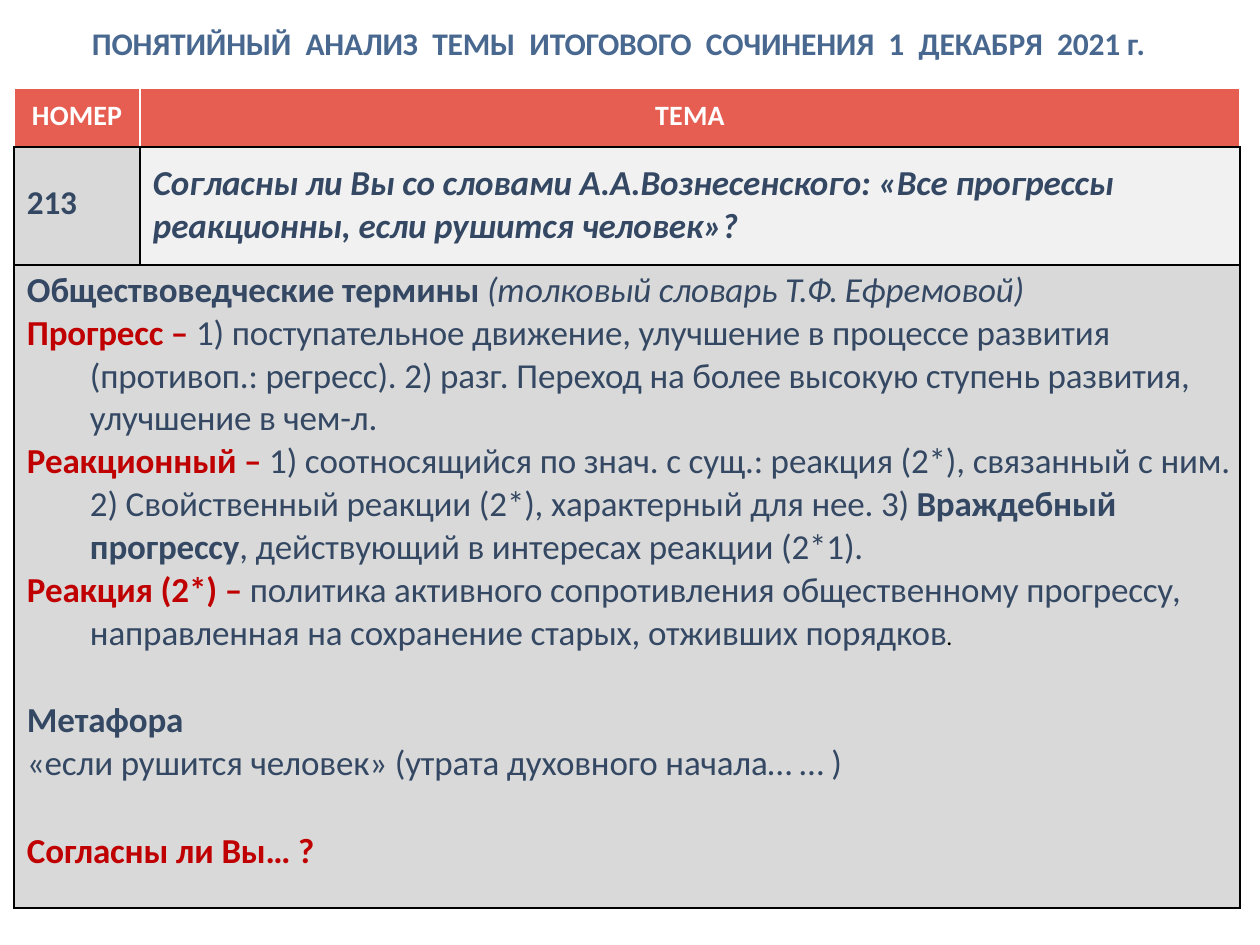
from lxml.etree import SubElement
from pptx import Presentation
from pptx.dml.color import RGBColor
from pptx.enum.text import PP_ALIGN
from pptx.oxml.ns import qn
from pptx.util import Emu, Pt

PX = 914400 // 126
NAVY, RED, BLACK, WHITE = "344863", "C00000", "000000", "FFFFFF"
CORAL, GREY, PALE, TITLE_BLUE = "E65E52", "D9D9D9", "F1F1F1", "496890"
SIDES = ("L", "R", "T", "B")
BLANK_LINE = 25.5  # points left free between groups of the analysis

TERM = {"color": RED, "bold": True}
BOLD = {"bold": True}

# Paragraphs: left indent px, first-line indent px, space before pt, runs
ANALYSIS = [
    (13, 0, 0, [("Обществоведческие термины ", BOLD),
                ("(толковый словарь ", {"italic": True}),
                ("Т.Ф. ", {"italic": True, "spacing": -0.6}),
                ("Ефремовой)", {"italic": True})]),
    (76, -63, 0, [("Прогресс – ", TERM),
                  ("1) поступательное движение, улучшение в процессе развития "
                   "(противоп.: регресс). 2) разг. Переход на более высокую "
                   "ступень развития, улучшение в чем-л.", {})]),
    (76, -63, 0, [("Реакционный – ", TERM),
                  ("1) соотносящийся по знач. с сущ.: реакция (2*), связанный с "
                   "ним. 2) Свойственный реакции (2*), характерный для нее. 3) ", {}),
                  ("Враждебный прогрессу", BOLD),
                  (", действующий в интересах реакции (2*1).", {})]),
    (13, 0, 0, [("Реакция (2*) – ", TERM),
                ("политика активного сопротивления общественному прогрессу,", {})]),
    (76, 0, 0, [("направленная на сохранение старых, отживших порядков", {}),
                (".", {"size": 13.5, "color": BLACK})]),
    (13, 0, BLANK_LINE, [("Метафора", BOLD)]),
    (13, 0, 0, [("«если рушится человек» (утрата духовного начала… … )", {})]),
    (13, 0, BLANK_LINE, [("Согласны ли Вы… ?", TERM)]),
]


def px(length):
    return Emu(length * PX)


def rgb(value):
    return RGBColor.from_string(value)


def add_run(paragraph, text, size=20, color=NAVY, bold=False, italic=False, spacing=-0.1):
    run = paragraph.add_run()
    run.text = text
    font = run.font
    font.name, font.size, font.bold, font.italic = "Calibri", Pt(size), bold, italic
    font.color.rgb = rgb(color)
    run._r.get_or_add_rPr().set("spc", str(round(spacing * 100)))


def write_paragraphs(frame, paragraphs, align=PP_ALIGN.LEFT):
    frame.word_wrap = True
    for number, (left, first, before, runs) in enumerate(paragraphs):
        paragraph = frame.add_paragraph() if number else frame.paragraphs[0]
        paragraph.alignment = align
        paragraph.space_before = Pt(before)
        properties = paragraph._p.get_or_add_pPr()
        properties.set("marL", str(px(left)))
        properties.set("indent", str(px(first)))
        for text, style in runs:
            add_run(paragraph, text, **style)


def style_cell(cell, fill, top, borders):
    cell.margin_left = cell.margin_right = cell.margin_bottom = 0
    cell.margin_top = px(top)
    properties = cell._tc.get_or_add_tcPr()
    for side, color in zip(SIDES, borders):
        line = SubElement(properties, qn(f"a:ln{side}"), w=str(Pt(1)))
        SubElement(SubElement(line, qn("a:solidFill")), qn("a:srgbClr"), val=color)
    cell.fill.solid()
    cell.fill.fore_color.rgb = rgb(fill)


def add_title(slide):
    title = slide.shapes.add_textbox(px(91), px(23), px(1067), px(42))
    frame = title.text_frame
    frame.margin_left = frame.margin_right = frame.margin_bottom = 0
    frame.margin_top = px(1)
    style = {"size": 18, "color": TITLE_BLUE, "bold": True}
    words = "ПОНЯТИЙНЫЙ АНАЛИЗ ТЕМЫ ИТОГОВОГО СОЧИНЕНИЯ 1 ДЕКАБРЯ".split()
    runs = []
    for word in words:
        # Tracking on the space widens the gap between words
        runs += [(word, style), (" ", {**style, "spacing": 4})]
    runs.append(("2021 г.", style))
    write_paragraphs(frame, [(1, 0, 0, runs)])


def add_topic_table(slide):
    table = slide.shapes.add_table(3, 2, px(14), px(88), px(1226), px(820)).table
    table.first_row = table.horz_banding = False
    for column, width in zip(table.columns, (126, 1100)):
        column.width = px(width)
    for row, height in zip(table.rows, (59, 118, 643)):
        row.height = px(height)
    table.cell(2, 0).merge(table.cell(2, 1))

    # Fill and top margin of each cell, row by row
    looks = [[(CORAL, 11), (CORAL, 11)], [(GREY, 36), (PALE, 15)], [(GREY, 4), (GREY, 4)]]
    for row, row_looks in enumerate(looks):
        borders = (BLACK,) * 4 if row else (WHITE, WHITE, WHITE, BLACK)
        for column, (fill, top) in enumerate(row_looks):
            style_cell(table.cell(row, column), fill, top, borders)

    # Header
    header = {"size": 16, "color": WHITE, "bold": True, "spacing": 0.1}
    write_paragraphs(table.cell(0, 0).text_frame, [(18, 0, 0, [("НОМЕР", header)])])
    write_paragraphs(table.cell(0, 1).text_frame, [(0, 0, 0, [("ТЕМА", header)])],
                     PP_ALIGN.CENTER)

    # Topic number and wording
    write_paragraphs(table.cell(1, 0).text_frame,
                     [(13, 0, 0, [("213", {"size": 19, "bold": True})])])
    topic = ("Согласны ли Вы со словами А.А.Вознесенского: «Все прогрессы",
             "реакционны, если рушится человек»?")
    write_paragraphs(table.cell(1, 1).text_frame,
                     [(13, 0, 0, [(line, {"bold": True, "italic": True})]) for line in topic])

    # Analysis of the terms
    write_paragraphs(table.cell(2, 0).text_frame, ANALYSIS)


def main():
    presentation = Presentation()
    presentation.slide_width, presentation.slide_height = px(1260), px(945)
    slide = presentation.slides.add_slide(presentation.slide_layouts[6])
    add_topic_table(slide)
    add_title(slide)
    presentation.save("out.pptx")


if __name__ == "__main__":
    main()
